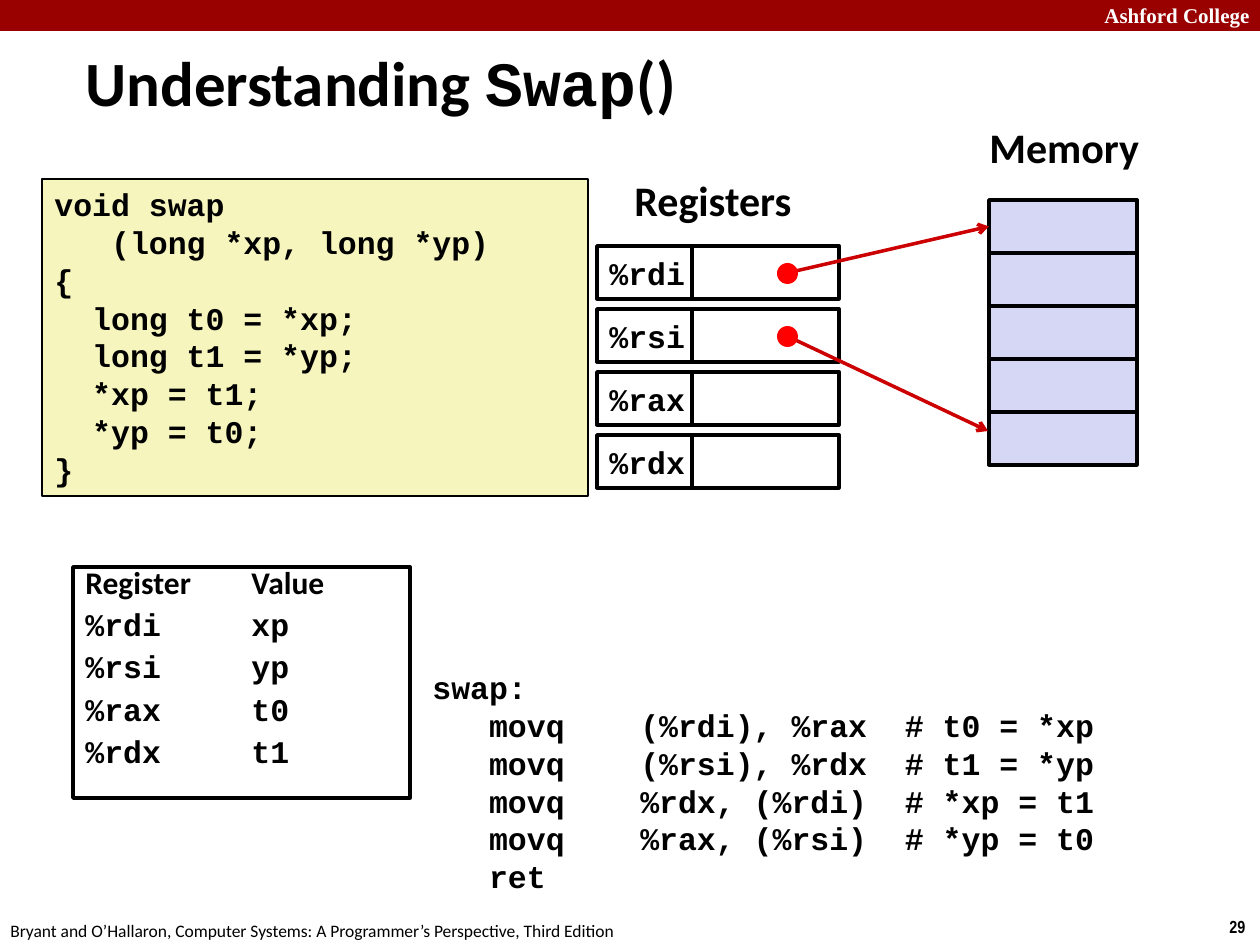
from lxml.etree import SubElement
from pptx import Presentation
from pptx.dml.color import RGBColor
from pptx.enum.shapes import MSO_CONNECTOR, MSO_SHAPE
from pptx.enum.text import MSO_ANCHOR, PP_ALIGN
from pptx.oxml.ns import qn
from pptx.util import Emu, Pt

SCALE = 914400 / 126  # EMU in one px


def px(*lengths):
    return [Emu(round(length * SCALE)) for length in lengths]


def style(shape, fill=None, line=None, line_width=2, text="", font="Courier New", size=18,
          color="000000", bold=True, wrap=True, anchor=MSO_ANCHOR.TOP):
    """Set the fill, outline and left-aligned text of a shape or text box."""
    shape.shadow.inherit = False
    if fill:
        shape.fill.solid()
        shape.fill.fore_color.rgb = RGBColor.from_string(fill)
    else:
        shape.fill.background()
    if line:
        shape.line.color.rgb = RGBColor.from_string(line)
        shape.line.width = Pt(line_width)
    else:
        shape.line.fill.background()
    frame = shape.text_frame
    frame.text = text
    frame.word_wrap = wrap
    frame.vertical_anchor = anchor
    for paragraph in frame.paragraphs:
        paragraph.alignment = PP_ALIGN.LEFT
        for run in paragraph.runs:
            run.font.name = font
            run.font.size = Pt(size)
            run.font.bold = bold
            run.font.color.rgb = RGBColor.from_string(color)


presentation = Presentation()
presentation.slide_width, presentation.slide_height = px(1260, 945)
slide = presentation.slides.add_slide(presentation.slide_layouts[6])
shapes = slide.shapes

# Header band and footer
band = shapes.add_shape(MSO_SHAPE.RECTANGLE, *px(0, 0, 1260, 31))
style(band, fill="990000")
school = shapes.add_textbox(*px(1082, -4, 180, 38))
style(school, text="Ashford College", font="Times New Roman", size=12, color="FFFFFF")
school.text_frame.paragraphs[0].alignment = PP_ALIGN.RIGHT
page_number = shapes.add_textbox(*px(1217, 910, 43, 34))
style(page_number, text="29", font="Arial Narrow", size=10, wrap=False)
footer = shapes.add_textbox(*px(-2, 914, 640, 34))
style(footer, text="Bryant and O’Hallaron, Computer Systems: A Programmer’s Perspective, Third Edition",
      font="Calibri", size=10, bold=False, wrap=False)

# Title
title = shapes.add_textbox(*px(73, 42, 878, 79))
style(title, text="Understanding ", font="Calibri", size=36, anchor=MSO_ANCHOR.MIDDLE)
for text, font in [("Swap", "Courier New"), ("()", "Calibri")]:
    run = title.text_frame.paragraphs[0].add_run()
    run.text = text
    run.font.name = font
    run.font.size = Pt(36)
    run.font.bold = True
    run.font.color.rgb = RGBColor.from_string("000000")

# Headings of the diagram
for text, left, top, width in [("Registers", 622, 168, 186), ("Memory", 977, 115, 176)]:
    heading = shapes.add_textbox(*px(left, top, width, 63))
    style(heading, text=text, font="Calibri", size=24, wrap=False)

# C code
c_code = shapes.add_shape(MSO_SHAPE.RECTANGLE, *px(42, 179, 546, 317))
style(c_code, fill="F6F5BD", line="000000", line_width=1, text="""void swap
   (long *xp, long *yp)
{
  long t0 = *xp;
  long t1 = *yp;
  *xp = t1;
  *yp = t0;
}""")

# Registers: name and value cell
registers = ["%rdi", "%rsi", "%rax", "%rdx"]
for row, name in enumerate(registers):
    top = 246 + 63 * row
    name_cell = shapes.add_shape(MSO_SHAPE.RECTANGLE, *px(597, top, 95, 53))
    style(name_cell, fill="FFFFFF", line="000000", text=name, wrap=False, anchor=MSO_ANCHOR.MIDDLE)
    value_cell = shapes.add_shape(MSO_SHAPE.RECTANGLE, *px(692, top, 147, 53))
    style(value_cell, fill="FFFFFF", line="000000")

# Memory
memory_cells = []
for row in range(5):
    cell = shapes.add_shape(MSO_SHAPE.RECTANGLE, *px(989, 200 + 53 * row, 148, 53))
    style(cell, fill="D6D6F5", line="000000")
    memory_cells.append(cell)

# Pointers from registers to memory
for row, end_y in enumerate([227, 431]):
    center_y = 273 + 63 * row
    pointer = shapes.add_connector(MSO_CONNECTOR.STRAIGHT, *px(787, center_y, 988, end_y))
    if row == 0:
        pointer.end_connect(memory_cells[0], 1)
    pointer.line.color.rgb = RGBColor.from_string("CC0000")
    pointer.line.width = Pt(2)
    SubElement(pointer.line._get_or_add_ln(), qn("a:tailEnd"), type="arrow")
    SubElement(pointer._element.spPr, qn("a:effectLst"))
    dot = shapes.add_shape(MSO_SHAPE.OVAL, *px(777, center_y - 10, 21, 21))
    style(dot, fill="FF0000")

# Register contents
contents = ["Register\tValue"]
for register, value in zip(registers, ["xp", "yp", "t0", "t1"]):
    contents.append(f"{register}\t{value}")
register_values = shapes.add_shape(MSO_SHAPE.RECTANGLE, *px(73, 567, 337, 231))
style(register_values, line="000000", text="\n".join(contents))
for paragraph in register_values.text_frame.paragraphs:
    paragraph.line_spacing = 0.7
    paragraph.space_before = Pt(9)
    tab_list = SubElement(paragraph._p.get_or_add_pPr(), qn("a:tabLst"))
    SubElement(tab_list, qn("a:tab"), pos=str(px(166)[0]), algn="l")
for run in register_values.text_frame.paragraphs[0].runs:
    run.font.name = "Calibri"

# Assembly code
assembly = shapes.add_textbox(*px(420, 662, 809, 242))
style(assembly, text="""swap:
   movq    (%rdi), %rax  # t0 = *xp
   movq    (%rsi), %rdx  # t1 = *yp
   movq    %rdx, (%rdi)  # *xp = t1
   movq    %rax, (%rsi)  # *yp = t0
   ret""")

presentation.save("out.pptx")
